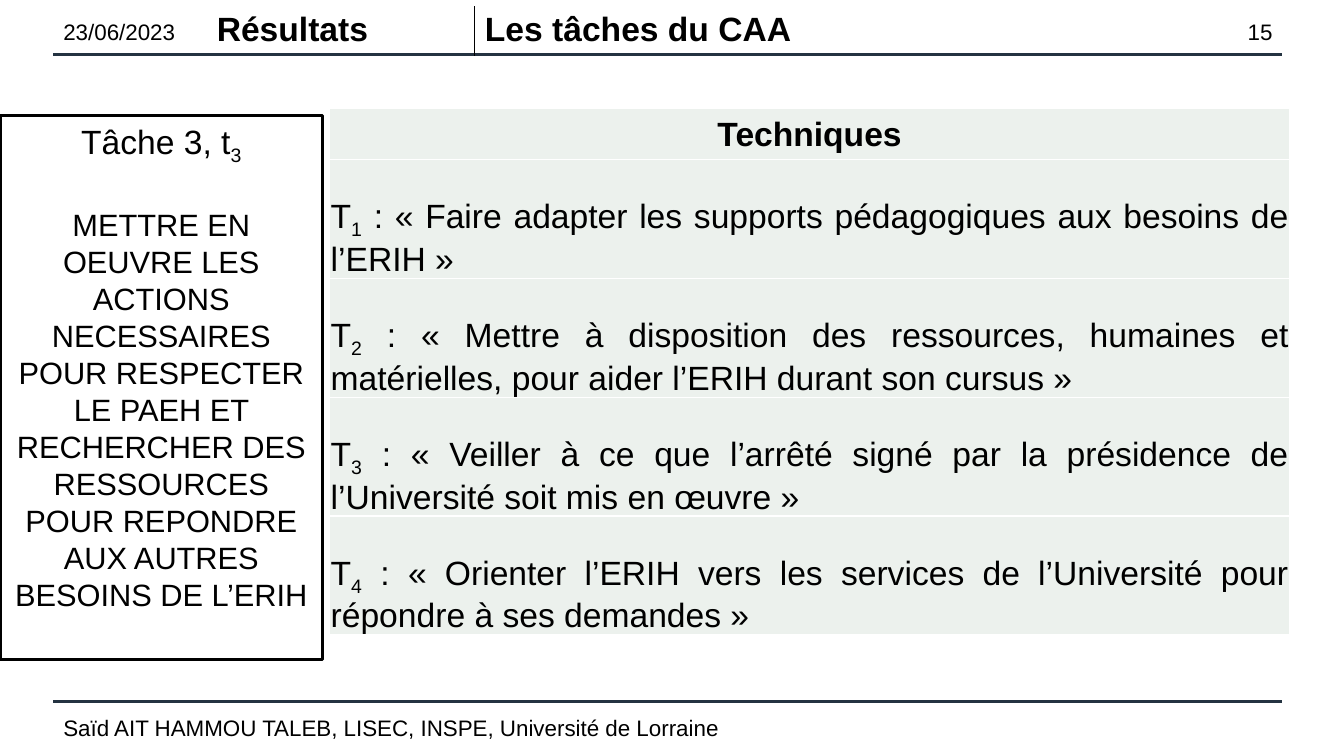
from lxml.etree import SubElement as Sub
from pptx import Presentation
from pptx.dml.color import RGBColor as Rgb
from pptx.enum.shapes import MSO_CONNECTOR as Conn, MSO_SHAPE as Kind
from pptx.enum.text import MSO_ANCHOR as Anchor, PP_ALIGN as Align
from pptx.oxml.ns import qn
from pptx.util import Inches, Pt

DATE = "23/06/2023"
PAGE = "15"
AUTHOR = "Saïd AIT HAMMOU TALEB, LISEC, INSPE, Université de Lorraine"
HEADS = ["Résultats", "Les tâches du CAA"]
TASK = "Tâche 3, t_3_"
GOAL = ("METTRE EN OEUVRE LES ACTIONS NECESSAIRES POUR RESPECTER LE PAEH ET "
        "RECHERCHER DES RESSOURCES POUR REPONDRE AUX AUTRES BESOINS DE L’ERIH")
TITLE = "Techniques"
TECHS = [
    "T_1_ : « Faire adapter les supports pédagogiques aux besoins de l’ERIH »",
    "T_2_ : « Mettre à disposition des ressources, humaines et matérielles, pour aider l’ERIH durant son cursus »",
    "T_3_ : « Veiller à ce que l’arrêté signé par la présidence de l’Université soit mis en œuvre »",
    "T_4_ : « Orienter l’ERIH vers les services de l’Université pour répondre à ses demandes »",
]

BLACK = Rgb(0, 0, 0)
WHITE = Rgb(255, 255, 255)
NAVY = Rgb(0x24, 0x33, 0x41)
MINT = Rgb(0xEC, 0xF1, 0xED)
PLAIN = "{2D5ABB26-0587-4C30-8999-92F81FD0307C}"
LEFT, RIGHT = 0.53, 12.72
RULES = [0.54, 6.96]
NOTES = [
    (DATE, LEFT, 0.11, 3, Align.LEFT),
    (AUTHOR, LEFT, 7.02, 11.49, Align.LEFT),
    (PAGE, RIGHT - 0.7, 0.11, 0.7, Align.RIGHT),
]

deck = Presentation()
deck.slide_width, deck.slide_height = Inches(13.33), Inches(7.5)
slide = deck.slides.add_slide(deck.slide_layouts[6])
shapes = slide.shapes


def write(para, text, size=24, bold=False, align=Align.LEFT, before=0):
    para.alignment = align
    para.space_before = Pt(before)
    for i, part in enumerate(text.split("_")):
        run = para.add_run()
        run.text = part
        font = run.font
        font.name, font.size, font.bold = "Arial", Pt(size), bold
        font.color.rgb = BLACK
        if i % 2:
            font._element.set("baseline", "-25000")


def grid(x, y, cols, rows):
    size = [Inches(n) for n in (x, y, sum(cols), sum(rows))]
    table = shapes.add_table(len(rows), len(cols), *size).table
    table.first_row = table.horz_banding = False
    table._tbl.tblPr.find(qn("a:tableStyleId")).text = PLAIN
    for col, wide in zip(table.columns, cols):
        col.width = Inches(wide)
    for row, high in zip(table.rows, rows):
        row.height = Inches(high)
    return table


def edge(cell, sides, color):
    props = cell._tc.get_or_add_tcPr()
    for side in sides:
        line = Sub(props, qn("a:ln" + side), w=str(Pt(1)))
        fill = Sub(line, qn("a:solidFill"))
        Sub(fill, qn("a:srgbClr"), val=str(color))


for y in RULES:
    rule = shapes.add_connector(Conn.STRAIGHT, Inches(LEFT), Inches(y), Inches(RIGHT), Inches(y))
    rule.line.color.rgb, rule.line.width = NAVY, Pt(2.25)
    Sub(rule._element.spPr, qn("a:effectLst"))

for text, x, y, wide, align in NOTES:
    frame = shapes.add_textbox(Inches(x), Inches(y), Inches(wide), Inches(0.4)).text_frame
    frame.word_wrap = True
    frame.vertical_anchor = Anchor.MIDDLE
    write(frame.paragraphs[0], text, size=16, align=align)

head = grid(2.05, 0.06, [2.66, 7.48], [0.46])
for cell, text, side in zip(head.iter_cells(), HEADS, "RL"):
    write(cell.text_frame.paragraphs[0], text, bold=True)
    edge(cell, side, BLACK)

box = shapes.add_shape(Kind.RECTANGLE, 0, Inches(1.15), Inches(3.2), Inches(5.39))
box.shadow.inherit = False
box.fill.background()
box.line.color.rgb, box.line.width = BLACK, Pt(2.25)
frame = box.text_frame
frame.word_wrap = True
frame.vertical_anchor = Anchor.TOP
write(frame.paragraphs[0], TASK, align=Align.CENTER)
write(frame.add_paragraph(), GOAL, size=22, align=Align.CENTER, before=28)

techs = grid(3.27, 1.08, [9.52], [0.5] + [1.18] * len(TECHS))
for i, (cell, text) in enumerate(zip(techs.iter_cells(), [TITLE] + TECHS)):
    cell.margin_left = cell.margin_right = cell.margin_top = Inches(0.01)
    cell.margin_bottom = 0
    cell.vertical_anchor = Anchor.BOTTOM if i else Anchor.MIDDLE
    edge(cell, "LRTB", WHITE)
    cell.fill.solid()
    cell.fill.fore_color.rgb = MINT
    write(cell.text_frame.paragraphs[0], text, bold=i == 0,
          align=Align.JUSTIFY if i else Align.CENTER)

deck.save("out.pptx")
